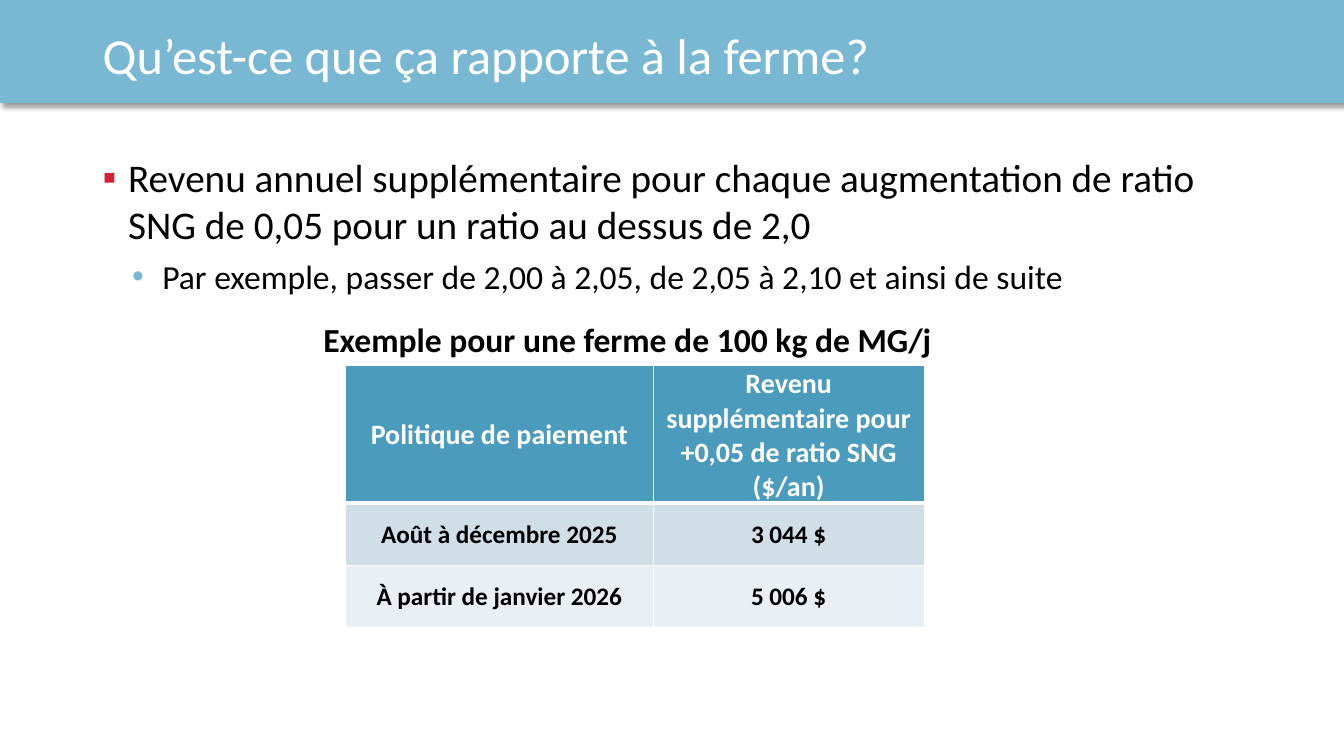
"""Builds a slide on the farm income gained from a better SNG ratio."""
from dataclasses import dataclass

from lxml import etree
from pptx import Presentation
from pptx.dml.color import RGBColor
from pptx.enum.shapes import MSO_SHAPE
from pptx.enum.text import MSO_ANCHOR, PP_ALIGN
from pptx.oxml.ns import qn
from pptx.util import Cm, Pt

RECT = MSO_SHAPE.RECTANGLE
TOP, MIDDLE = MSO_ANCHOR.TOP, MSO_ANCHOR.MIDDLE
LEFT, CENTER = PP_ALIGN.LEFT, PP_ALIGN.CENTER
FONT = "Calibri"
COLORS = {
    "band": "79B8D2", "head": "4A9BBC", "odd": "D0DEE7", "even": "E9EFF3",
    "red": "D32235", "white": "FFFFFF", "black": "000000",
}


@dataclass
class Bullet:
    mark: str
    color: str
    left: float
    hang: float


@dataclass
class Line:
    text: str
    size: float
    color: str = "black"
    bold: bool = False
    align: PP_ALIGN = LEFT
    after: float = 0
    space: float = 1
    bullet: Bullet | None = None


@dataclass
class Box:
    left: float
    top: float
    width: float
    height: float
    lines: list[Line]
    anchor: MSO_ANCHOR = TOP


@dataclass
class Row:
    height: float
    fill: str
    color: str
    size: float
    above: float
    below: float
    cells: list[list[str]]


BOXES = [
    Box(2.34, 0.58, 26.42, 1.75, [
        Line("Qu’est-ce que ça rapporte à la ferme?", 36, "white", space=0.9),
    ], MIDDLE),
    Box(2.34, 3.73, 29.21, 13.97, [
        Line("Revenu annuel supplémentaire pour chaque augmentation de ratio "
             "SNG de 0,05 pour un ratio au dessus de 2,0", 28, after=6,
             bullet=Bullet("▪", "red", 0.64, 0.64)),
        Line("Par exemple, passer de 2,00 à 2,05, de 2,05 à 2,10 et ainsi de suite",
             24, after=6, bullet=Bullet("•", "band", 1.5, 0.76)),
    ]),
    Box(7.9, 7.9, 16.18, 2.31, [
        Line("Exemple pour une ferme de 100 kg de MG/j", 24, bold=True),
    ]),
]
COLS = [7.75, 6.83]
ROWS = [
    Row(3.45, "head", "white", 20, 1, 3, [
        ["Politique de paiement"],
        ["Revenu supplémentaire pour +0,05 de ratio SNG", "($/an)"]]),
    Row(1.57, "odd", "black", 18, 3, 1, [["Août à décembre 2025"], ["3 044 $"]]),
    Row(1.57, "even", "black", 18, 1, 1, [["À partir de janvier 2026"], ["5 006 $"]]),
]


def rgb(name: str) -> RGBColor:
    return RGBColor.from_string(COLORS[name])


def add(parent, tag: str, **attrs):
    return etree.SubElement(parent, qn(tag), attrs)


def mark(para, bullet: Bullet) -> None:
    props = para._p.get_or_add_pPr()
    props.set("marL", str(Cm(bullet.left)))
    props.set("indent", str(-Cm(bullet.hang)))
    add(add(props, "a:buClr"), "a:srgbClr", val=COLORS[bullet.color])
    add(props, "a:buFont", typeface="Arial")
    add(props, "a:buChar", char=bullet.mark)


def write(frame, lines: list[Line]) -> None:
    frame.word_wrap = True
    for i, line in enumerate(lines):
        para = frame.add_paragraph() if i else frame.paragraphs[0]
        para.text = line.text
        para.alignment = line.align
        para.line_spacing = line.space
        para.space_after = Pt(line.after)
        if line.bullet:
            mark(para, line.bullet)
        font = para.font
        font.name, font.size, font.bold = FONT, Pt(line.size), line.bold
        font.color.rgb = rgb(line.color)


def draw_band(slide, width: int) -> None:
    band = slide.shapes.add_shape(RECT, 0, 0, width, Cm(2.59))
    band.shadow.inherit = False
    band.fill.solid()
    band.fill.fore_color.rgb = band.line.color.rgb = rgb("band")
    band.line.width = Pt(1)
    glow = add(band._element.spPr.find(qn("a:effectLst")), "a:outerShdw",
               blurRad=str(Pt(4)), dist=str(Pt(3)), dir="2700000",
               algn="tl", rotWithShape="0")
    shade = add(glow, "a:srgbClr", val=COLORS["black"])
    add(shade, "a:alpha", val="40000")


def draw_box(slide, box: Box) -> None:
    shape = slide.shapes.add_textbox(
        Cm(box.left), Cm(box.top), Cm(box.width), Cm(box.height))
    shape.text_frame.vertical_anchor = box.anchor
    write(shape.text_frame, box.lines)


def edge(cell, row: Row) -> None:
    props = cell._tc.get_or_add_tcPr()
    widths = {"L": 1, "R": 1, "T": row.above, "B": row.below}
    for side, width in widths.items():
        line = add(props, f"a:ln{side}", w=str(Pt(width)))
        add(add(line, "a:solidFill"), "a:srgbClr", val=COLORS["white"])


def draw_table(slide, rows: list[Row], cols: list[float]) -> None:
    table = slide.shapes.add_table(
        len(rows), len(cols), Cm(8.71), Cm(9.22), Cm(sum(cols)),
        Cm(sum(row.height for row in rows))).table
    for col, width in zip(table.columns, cols):
        col.width = Cm(width)
    for r, row in enumerate(rows):
        table.rows[r].height = Cm(row.height)
        for c, texts in enumerate(row.cells):
            cell = table.cell(r, c)
            cell.margin_left = cell.margin_right = cell.margin_top = Cm(0.03)
            cell.margin_bottom = 0
            cell.vertical_anchor = MIDDLE
            edge(cell, row)
            cell.fill.solid()
            cell.fill.fore_color.rgb = rgb(row.fill)
            write(cell.text_frame, [
                Line(text, row.size, row.color, True, CENTER) for text in texts])


def main() -> None:
    deck = Presentation()
    deck.slide_width, deck.slide_height = Cm(33.87), Cm(19.05)
    slide = deck.slides.add_slide(deck.slide_layouts[6])
    draw_band(slide, deck.slide_width)
    for box in BOXES:
        draw_box(slide, box)
    draw_table(slide, ROWS, COLS)
    deck.save("out.pptx")


if __name__ == "__main__":
    main()
